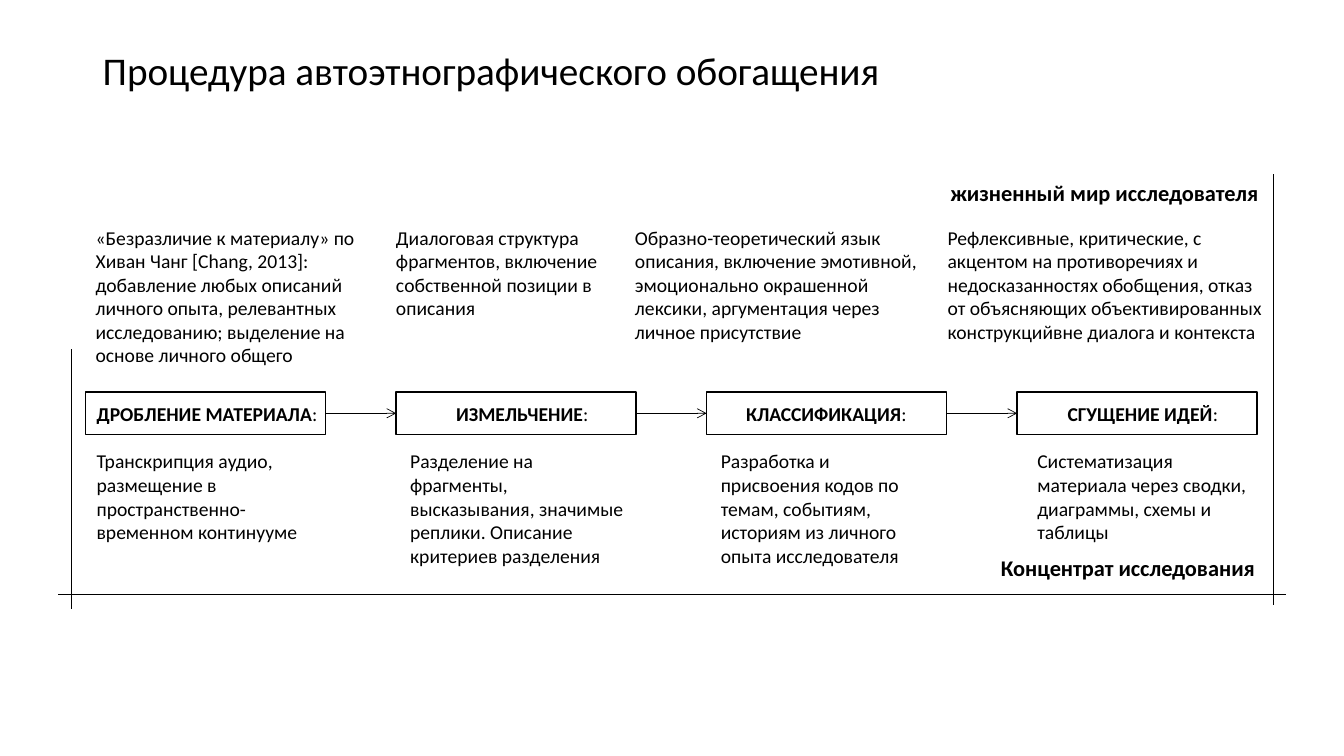
import pptx
import pptx.dml.color
import pptx.enum.shapes
import pptx.enum.text
import pptx.oxml
import pptx.oxml.ns
import pptx.util

COLOURS = {"ink": "000000", "paper": "FFFFFF"}
ALIGN = pptx.enum.text.PP_ALIGN
ANCHOR = pptx.enum.text.MSO_ANCHOR

STAGE_LEFT, STAGE_STEP, STAGE_WIDTH = 6.38, 23.1, 17.85
STAGE_TOP, STAGE_HEIGHT = 51.87, 5.6
STAGE_TEXT_TOP, REMARK_TOP = 52.53, 29.2
LINE_HEIGHT, BOX_MARGINS = 3.15, 1.33

STAGES = [
    ("ДРОБЛЕНИЕ МАТЕРИАЛА", ALIGN.LEFT, 6.45, 18.98, 6,
     "Транскрипция аудио, размещение в пространственно-временном континууме"),
    ("ИЗМЕЛЬЧЕНИЕ", ALIGN.CENTER, 29.78, 18.15, 7,
     "Разделение на фрагменты, высказывания, значимые реплики. Описание критериев разделения"),
    ("КЛАССИФИКАЦИЯ", ALIGN.CENTER, 52.89, 17.18, 7,
     "Разработка и присвоения кодов по темам, событиям, историям из личного опыта исследователя"),
    ("СГУЩЕНИЕ ИДЕЙ", ALIGN.CENTER, 76.44, 17.18, 6,
     "Систематизация материала через сводки, диаграммы, схемы и таблицы"),
]
REMARKS = [
    (6.38, 21.3, 6, "«Безразличие к материалу» по Хиван Чанг [Chang, 2013]: добавление любых "
     "описаний личного опыта, релевантных исследованию; выделение на основе личного общего"),
    (28.73, 18.6, 4, "Диалоговая структура фрагментов, включение собственной позиции в описания"),
    (46.51, 22.66, 5, "Образно-теоретический язык описания, включение эмотивной, эмоционально "
     "окрашенной лексики, аргументация через личное присутствие"),
    (69.77, 25.21, 5, "Рефлексивные, критические, с акцентом на противоречиях и недосказанностях "
     "обобщения, отказ от объясняющих объективированных конструкцийвне диалога и контекста"),
]
CAPTIONS = [
    (69.99, 23.07, 24.68, "жизненный мир исследователя"),
    (73.74, 72.67, 20.63, "Концентрат исследования"),
]
FRAME_LINES = [
    (4.35, 78.67, 95.65, 78.67),
    (5.33, 80.53, 5.33, 46.13),
    (94.75, 80, 94.75, 23.07),
]


class SlideBuilder:
    font = "Calibri"
    body_size = 14

    def __init__(self, presentation):
        self.column = presentation.slide_width / 100
        self.row = presentation.slide_height / 100
        self.slide = presentation.slides.add_slide(presentation.slide_layouts[6])
        background = self.slide.background.fill
        background.solid()
        background.fore_color.rgb = self.colour("paper")

    def colour(self, name):
        return pptx.dml.color.RGBColor.from_string(COLOURS[name])

    def place(self, *lengths):
        return [round(length * unit) for length, unit in zip(lengths, (self.column, self.row) * 2)]

    def style(self, run, size, bold=False):
        run.font.name = self.font
        run.font.size = pptx.util.Pt(size)
        run.font.bold = bold
        run.font.color.rgb = self.colour("ink")

    def text(self, left, top, width, height, content, size=body_size, bold=False, wrap=True):
        shape = self.slide.shapes.add_textbox(*self.place(left, top, width, height))
        frame = shape.text_frame
        frame.word_wrap = wrap
        frame.text = content
        for paragraph in frame.paragraphs:
            for run in paragraph.runs:
                self.style(run, size, bold)
        return frame

    def title(self, content):
        frame = self.text(6.9, 5.33, 86.27, 8.53, content, 28)
        frame.vertical_anchor = ANCHOR.MIDDLE
        frame.paragraphs[0].line_spacing = 0.9

    def paragraph_box(self, left, top, width, line_count, content):
        height = line_count * LINE_HEIGHT + BOX_MARGINS
        return self.text(left, top, width, height, content)

    def stage_text(self, heading, alignment, left, width, line_count, description):
        frame = self.paragraph_box(left, STAGE_TEXT_TOP, width, line_count, f"{heading}\n{description}")
        first, second = frame.paragraphs
        first.alignment = alignment
        first.runs[0].font.bold = True
        colon = first.add_run()
        colon.text = ":"
        self.style(colon, self.body_size)
        second.space_before = pptx.util.Pt(17)

    def outline_box(self, left, top, width, height):
        shape = self.slide.shapes.add_shape(
            pptx.enum.shapes.MSO_SHAPE.RECTANGLE, *self.place(left, top, width, height))
        shape.shadow.inherit = False
        shape.fill.background()
        shape.line.color.rgb = self.colour("ink")
        shape.line.width = pptx.util.Pt(1)

    def line(self, start_x, start_y, end_x, end_y, arrow=False):
        connector = self.slide.shapes.add_connector(
            pptx.enum.shapes.MSO_CONNECTOR.STRAIGHT, *self.place(start_x, start_y, end_x, end_y))
        connector.line.color.rgb = self.colour("ink")
        connector.line.width = pptx.util.Pt(0.5)
        if arrow:
            tail = pptx.oxml.parse_xml(f'<a:tailEnd {pptx.oxml.ns.nsdecls("a")} type="arrow"/>')
            connector.line._get_or_add_ln().append(tail)
        effects = pptx.oxml.parse_xml(f'<a:effectLst {pptx.oxml.ns.nsdecls("a")}/>')
        connector._element.spPr.append(effects)


def main():
    presentation = pptx.Presentation()
    presentation.slide_width = pptx.util.Inches(13.33)
    presentation.slide_height = pptx.util.Inches(7.5)
    builder = SlideBuilder(presentation)

    builder.title("Процедура автоэтнографического обогащения")
    for stage in STAGES:
        builder.stage_text(*stage)
    for index in range(len(STAGES)):
        left = STAGE_LEFT + index * STAGE_STEP
        builder.outline_box(left, STAGE_TOP, STAGE_WIDTH, STAGE_HEIGHT)
        if index:
            middle = STAGE_TOP + STAGE_HEIGHT / 2
            builder.line(left - STAGE_STEP + STAGE_WIDTH, middle, left, middle, arrow=True)
    for left, width, line_count, content in REMARKS:
        builder.paragraph_box(left, REMARK_TOP, width, line_count, content)
    for left, top, width, content in CAPTIONS:
        builder.text(left, top, width, 4.93, content, 16, bold=True, wrap=False)
    for ends in FRAME_LINES:
        builder.line(*ends)

    presentation.save("out.pptx")


if __name__ == "__main__":
    main()
